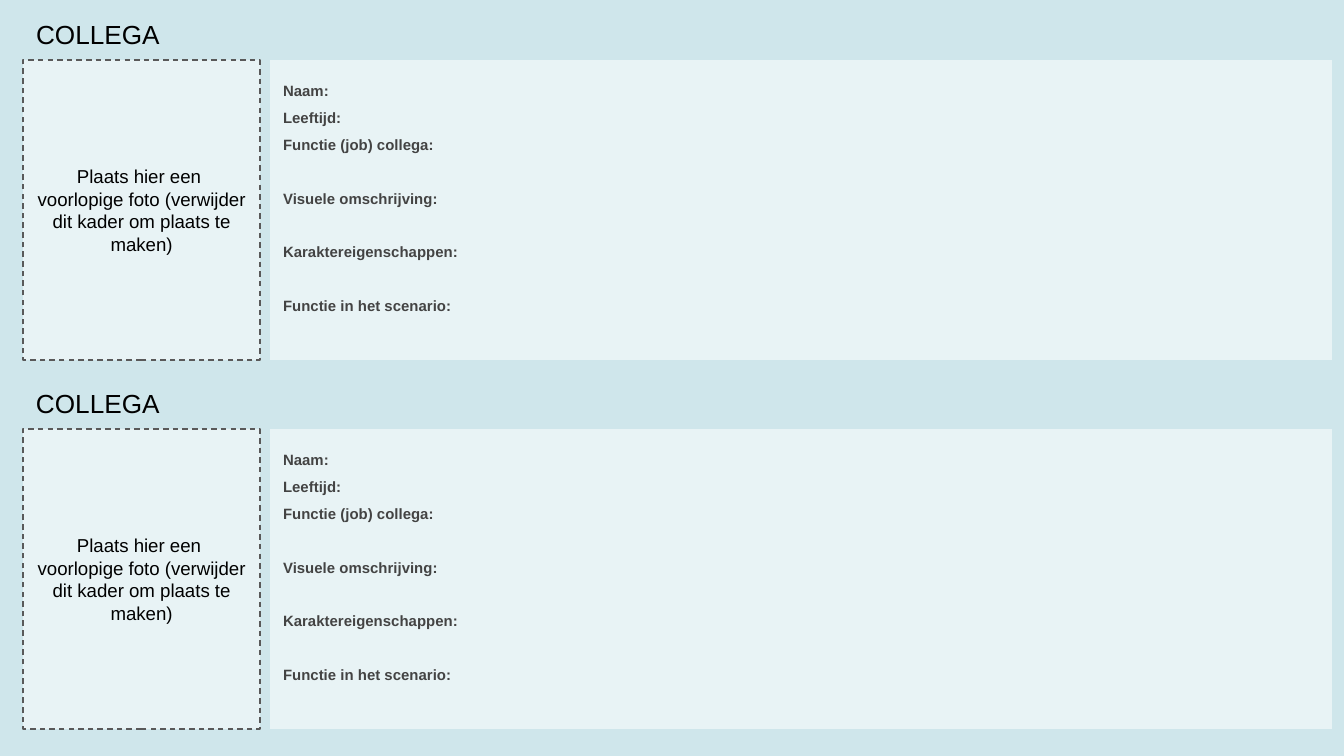
from dataclasses import dataclass

from lxml import etree
from pptx import Presentation
from pptx.dml.color import RGBColor
from pptx.enum.dml import MSO_LINE
from pptx.enum.shapes import MSO_SHAPE
from pptx.enum.text import MSO_ANCHOR, MSO_AUTO_SIZE, PP_ALIGN
from pptx.oxml.ns import qn
from pptx.util import Pt

RECTANGLE = MSO_SHAPE.RECTANGLE
DASH = MSO_LINE.DASH
TOP, MIDDLE = MSO_ANCHOR.TOP, MSO_ANCHOR.MIDDLE
LEFT, CENTER = PP_ALIGN.LEFT, PP_ALIGN.CENTER
NO_AUTOFIT = MSO_AUTO_SIZE.NONE

EMU_PER_PX = 914400 / 134.4
SLIDE_WIDTH, SLIDE_HEIGHT = 1344, 756
CARD_LEFT, CARD_WIDTH, CARD_HEIGHT = 23, 1309, 349
CARD_TOPS = (11, 380)
HEADING_WIDTH, HEADING_HEIGHT = 305, 46
PANEL_OFFSET = 49
PHOTO_WIDTH, PANEL_GAP = 237, 10
INSET, HEADING_INSET = 13, 7
TWO_CONTENT_LAYOUT = 3

HEADING = "COLLEGA"
PHOTO_HINT = (
    "Plaats hier een ",
    "voorlopige foto (verwijder dit kader om plaats te maken)",
)
# Each label is paired with whether writing room is left above it.
FIELDS = (
    ("Naam:", False),
    ("Leeftijd:", False),
    ("Functie (job) collega:", False),
    ("Visuele omschrijving:", True),
    ("Karaktereigenschappen:", True),
    ("Functie in het scenario:", True),
)


@dataclass(frozen=True)
class Theme:
    font: str = "Arial"
    background: RGBColor = RGBColor(0xCF, 0xE6, 0xEB)
    panel: RGBColor = RGBColor(0xFF, 0xFF, 0xFF)
    panel_opacity: int = 53
    border: RGBColor = RGBColor(0x59, 0x59, 0x59)
    text: RGBColor = RGBColor(0x00, 0x00, 0x00)
    label: RGBColor = RGBColor(0x43, 0x43, 0x43)
    heading_size: Pt = Pt(14)
    hint_size: Pt = Pt(10)
    label_size: Pt = Pt(8)
    label_spacing: float = 1.5
    field_gap: Pt = Pt(14.4)


THEME = Theme()


def px(value):
    return round(value * EMU_PER_PX)


def place(shape, left, top, width, height):
    shape.left, shape.top = px(left), px(top)
    shape.width, shape.height = px(width), px(height)


def fill_panel(shape):
    shape.fill.solid()
    shape.fill.fore_color.rgb = THEME.panel
    color = shape.fill._xPr.find(qn("a:solidFill"))[0]
    etree.SubElement(color, qn("a:alpha"), val=str(THEME.panel_opacity * 1000))


def prepare_frame(shape, anchor, vertical_inset):
    frame = shape.text_frame
    frame.word_wrap = True
    frame.auto_size = NO_AUTOFIT
    frame.vertical_anchor = anchor
    frame.margin_left = frame.margin_right = px(INSET)
    frame.margin_top = frame.margin_bottom = px(vertical_inset)
    return frame


def write(frame, lines, size, color, align=LEFT, bold=False):
    frame.text = "\n".join(lines)
    for paragraph in frame.paragraphs:
        paragraph.alignment = align
        font = paragraph.font
        font.name, font.size, font.bold = THEME.font, size, bold
        font.color.rgb = color


def remove_bullet(paragraph):
    properties = paragraph._p.get_or_add_pPr()
    properties.set("marL", "0")
    properties.set("indent", "0")
    properties.insert_element_before(
        etree.Element(qn("a:buNone")), "a:tabLst", "a:defRPr", "a:extLst"
    )


def add_heading(shape, left, top):
    place(shape, left, top, HEADING_WIDTH, HEADING_HEIGHT)
    frame = prepare_frame(shape, TOP, HEADING_INSET)
    write(frame, [HEADING], THEME.heading_size, THEME.text)


def add_photo_frame(slide, left, top, width, height):
    shape = slide.shapes.add_shape(RECTANGLE, 0, 0, 0, 0)
    place(shape, left, top, width, height)
    shape.shadow.inherit = False
    fill_panel(shape)
    shape.line.color.rgb = THEME.border
    shape.line.width = Pt(0.75)
    shape.line.dash_style = DASH
    frame = prepare_frame(shape, MIDDLE, INSET)
    write(frame, PHOTO_HINT, THEME.hint_size, THEME.text, CENTER)


def add_field_list(shape, left, top, width, height):
    place(shape, left, top, width, height)
    fill_panel(shape)
    frame = prepare_frame(shape, TOP, INSET)
    labels = [label for label, _ in FIELDS]
    write(frame, labels, THEME.label_size, THEME.label, bold=True)
    for paragraph, (_, room_above) in zip(frame.paragraphs, FIELDS):
        paragraph.line_spacing = THEME.label_spacing
        paragraph.space_before = THEME.field_gap if room_above else Pt(0)
        remove_bullet(paragraph)


def add_colleague_card(slide, heading, field_list, left, top, width, height):
    """Arrange a heading, a photo frame and a field list in the given box."""
    panel_top, panel_height = top + PANEL_OFFSET, height - PANEL_OFFSET
    fields_offset = PHOTO_WIDTH + PANEL_GAP
    add_photo_frame(slide, left, panel_top, PHOTO_WIDTH, panel_height)
    add_field_list(field_list, left + fields_offset, panel_top,
                   width - fields_offset, panel_height)
    add_heading(heading, left, top)


def main():
    presentation = Presentation()
    presentation.slide_width = px(SLIDE_WIDTH)
    presentation.slide_height = px(SLIDE_HEIGHT)
    layout = presentation.slide_layouts[TWO_CONTENT_LAYOUT]
    slide = presentation.slides.add_slide(layout)
    slide.background.fill.solid()
    slide.background.fill.fore_color.rgb = THEME.background

    title, *field_lists = slide.placeholders
    headings = (title, slide.shapes.add_textbox(0, 0, 0, 0))
    for heading, field_list, top in zip(headings, field_lists, CARD_TOPS):
        add_colleague_card(slide, heading, field_list,
                           CARD_LEFT, top, CARD_WIDTH, CARD_HEIGHT)
    presentation.save("out.pptx")


if __name__ == "__main__":
    main()
